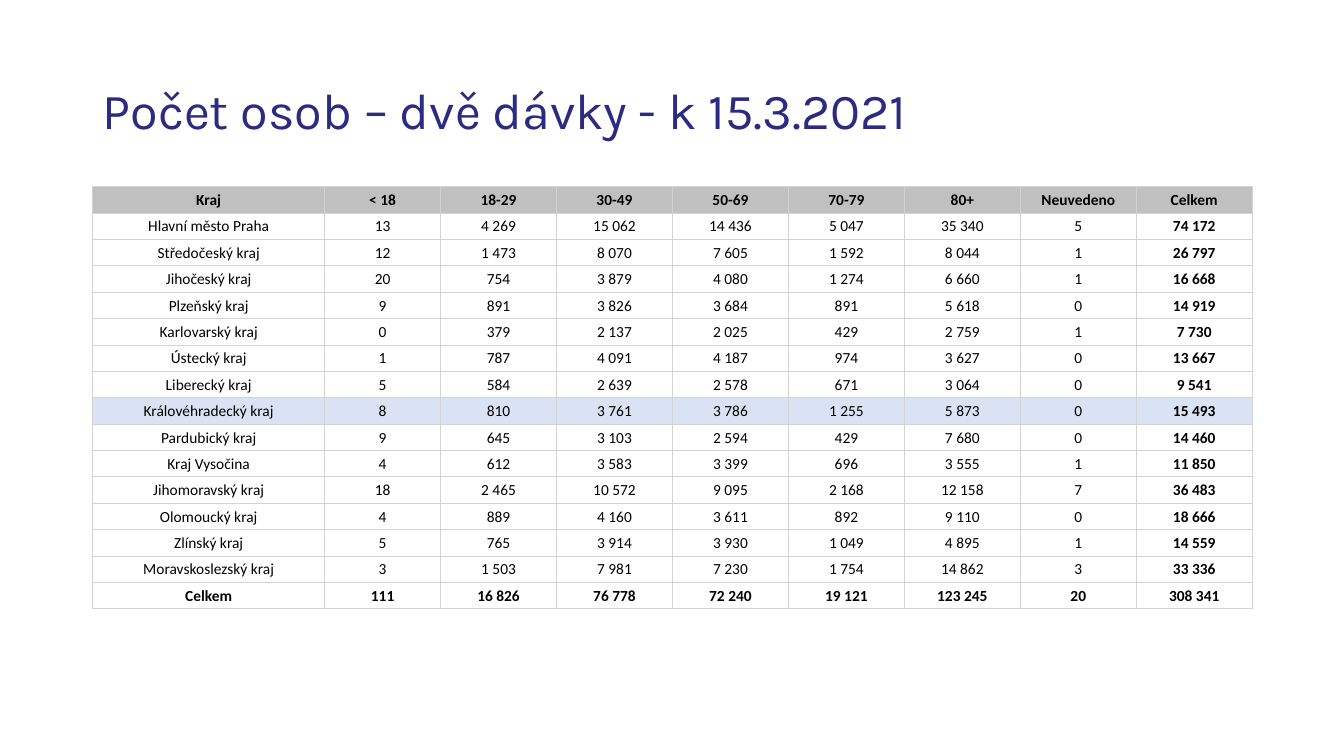
"""Build a slide with a table of fully vaccinated people by region and age group."""
import lxml.etree
import pptx
import pptx.dml.color
import pptx.enum.text
import pptx.oxml.ns
import pptx.util

Inches = pptx.util.Inches
Pt = pptx.util.Pt
RGB = pptx.dml.color.RGBColor.from_string

THEME = {
    "title": {"name": "Karla", "size": Pt(36), "color": "2B2B82"},
    "cell": {"name": "Calibri", "size": Pt(11), "color": "000000"},
    "header_fill": "C0C0C0",
    "highlight_fill": "DAE3F3",
    "border": "D3D3D3",
    "border_width": Pt(0.5),
}
CELL_FORMAT = {
    "vertical_anchor": pptx.enum.text.MSO_ANCHOR.MIDDLE,
    "margin_left": Inches(0.01),
    "margin_top": Inches(0.01),
    "margin_right": Inches(0.01),
    "margin_bottom": 0,
}
TITLE_FORMAT = {
    "word_wrap": True,
    "vertical_anchor": pptx.enum.text.MSO_ANCHOR.MIDDLE,
}

HEADER = ["Kraj", "< 18", "18-29", "30-49", "50-69", "70-79", "80+", "Neuvedeno", "Celkem"]
HIGHLIGHTED_REGION = "Královéhradecký kraj"
REGIONS = [
    ["Hlavní město Praha", 13, 4269, 15062, 14436, 5047, 35340, 5, 74172],
    ["Středočeský kraj", 12, 1473, 8070, 7605, 1592, 8044, 1, 26797],
    ["Jihočeský kraj", 20, 754, 3879, 4080, 1274, 6660, 1, 16668],
    ["Plzeňský kraj", 9, 891, 3826, 3684, 891, 5618, 0, 14919],
    ["Karlovarský kraj", 0, 379, 2137, 2025, 429, 2759, 1, 7730],
    ["Ústecký kraj", 1, 787, 4091, 4187, 974, 3627, 0, 13667],
    ["Liberecký kraj", 5, 584, 2639, 2578, 671, 3064, 0, 9541],
    [HIGHLIGHTED_REGION, 8, 810, 3761, 3786, 1255, 5873, 0, 15493],
    ["Pardubický kraj", 9, 645, 3103, 2594, 429, 7680, 0, 14460],
    ["Kraj Vysočina", 4, 612, 3583, 3399, 696, 3555, 1, 11850],
    ["Jihomoravský kraj", 18, 2465, 10572, 9095, 2168, 12158, 7, 36483],
    ["Olomoucký kraj", 4, 889, 4160, 3611, 892, 9110, 0, 18666],
    ["Zlínský kraj", 5, 765, 3914, 3930, 1049, 4895, 1, 14559],
    ["Moravskoslezský kraj", 3, 1503, 7981, 7230, 1754, 14862, 3, 33336],
]
TOTALS = ["Celkem", 111, 16826, 76778, 72240, 19121, 123245, 20, 308341]
ROWS = [HEADER, *REGIONS, TOTALS]


def write(paragraph, text, style, bold=False):
    """Put one styled run into the paragraph."""
    run = paragraph.add_run()
    run.text = text
    run.font.name = style["name"]
    run.font.size = style["size"]
    run.font.bold = bold
    run.font.color.rgb = RGB(style["color"])


def add_borders(cell):
    """Draw a thin line on all four sides of the cell."""
    properties = cell._tc.get_or_add_tcPr()
    qn = pptx.oxml.ns.qn
    for side in ("a:lnL", "a:lnR", "a:lnT", "a:lnB"):
        line = lxml.etree.SubElement(properties, qn(side), w=str(THEME["border_width"]))
        solid = lxml.etree.SubElement(line, qn("a:solidFill"))
        lxml.etree.SubElement(solid, qn("a:srgbClr"), val=THEME["border"])


presentation = pptx.Presentation()
presentation.slide_width = Inches(13.33)
presentation.slide_height = Inches(7.5)
slide = presentation.slides.add_slide(presentation.slide_layouts[6])

title = slide.shapes.add_textbox(Inches(0.92), Inches(0.4), Inches(11.5), Inches(1.45)).text_frame
for attribute, value in TITLE_FORMAT.items():
    setattr(title, attribute, value)
title.paragraphs[0].line_spacing = 0.9
write(title.paragraphs[0], "Počet osob – dvě dávky - k 15.3.2021", THEME["title"])

doses = slide.shapes.add_table(
    len(ROWS), len(HEADER), Inches(0.92), Inches(1.85), Inches(11.5), Inches(4.19)
).table
doses.first_row = False
doses.horz_banding = False
for index, column in enumerate(doses.columns):
    column.width = Inches(1.15 if index else 2.3)

for row_index, values in enumerate(ROWS):
    for column_index, value in enumerate(values):
        cell = doses.cell(row_index, column_index)
        for attribute, setting in CELL_FORMAT.items():
            setattr(cell, attribute, setting)
        add_borders(cell)

        if values is HEADER or values[0] == HIGHLIGHTED_REGION:
            cell.fill.solid()
            fill = THEME["header_fill" if values is HEADER else "highlight_fill"]
            cell.fill.fore_color.rgb = RGB(fill)
        else:
            cell.fill.background()

        text = value if isinstance(value, str) else f"{value:,}".replace(",", " ")
        bold = values is HEADER or values is TOTALS or column_index == len(HEADER) - 1
        paragraph = cell.text_frame.paragraphs[0]
        paragraph.alignment = pptx.enum.text.PP_ALIGN.CENTER
        write(paragraph, text, THEME["cell"], bold)

presentation.save("out.pptx")
